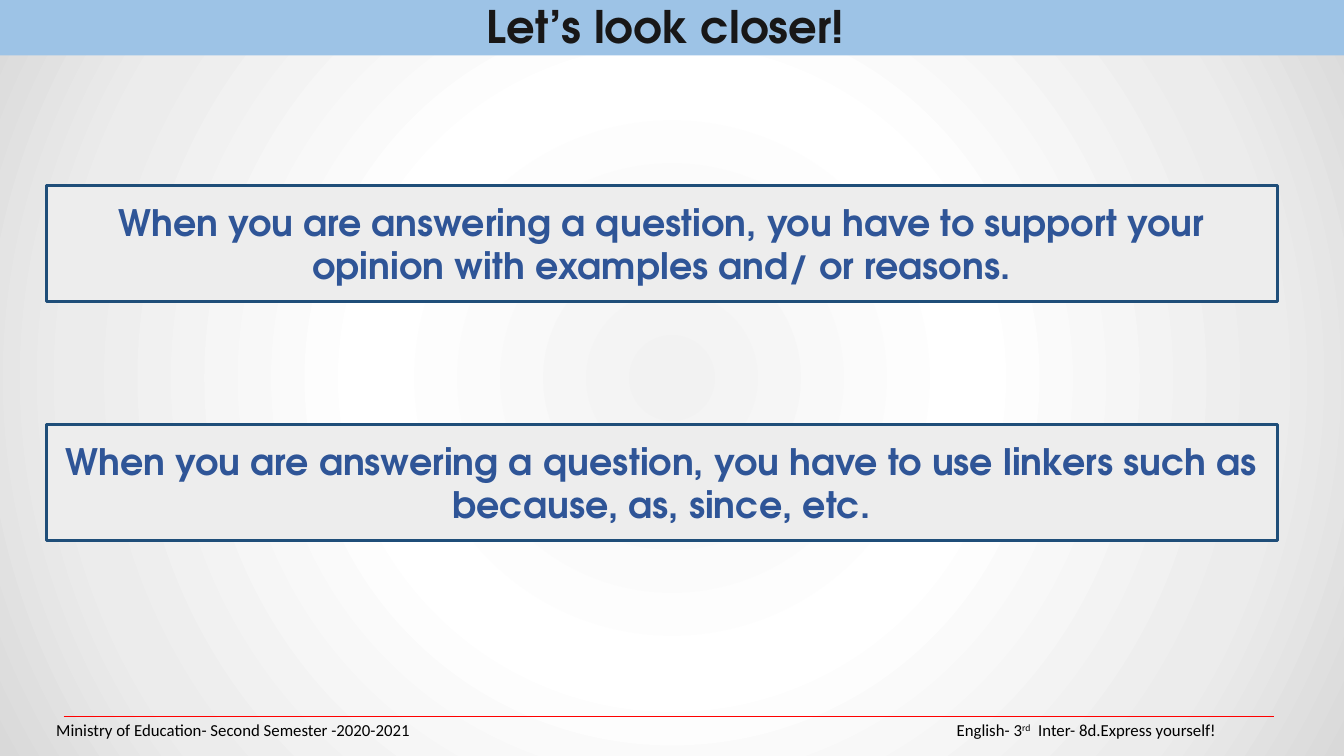
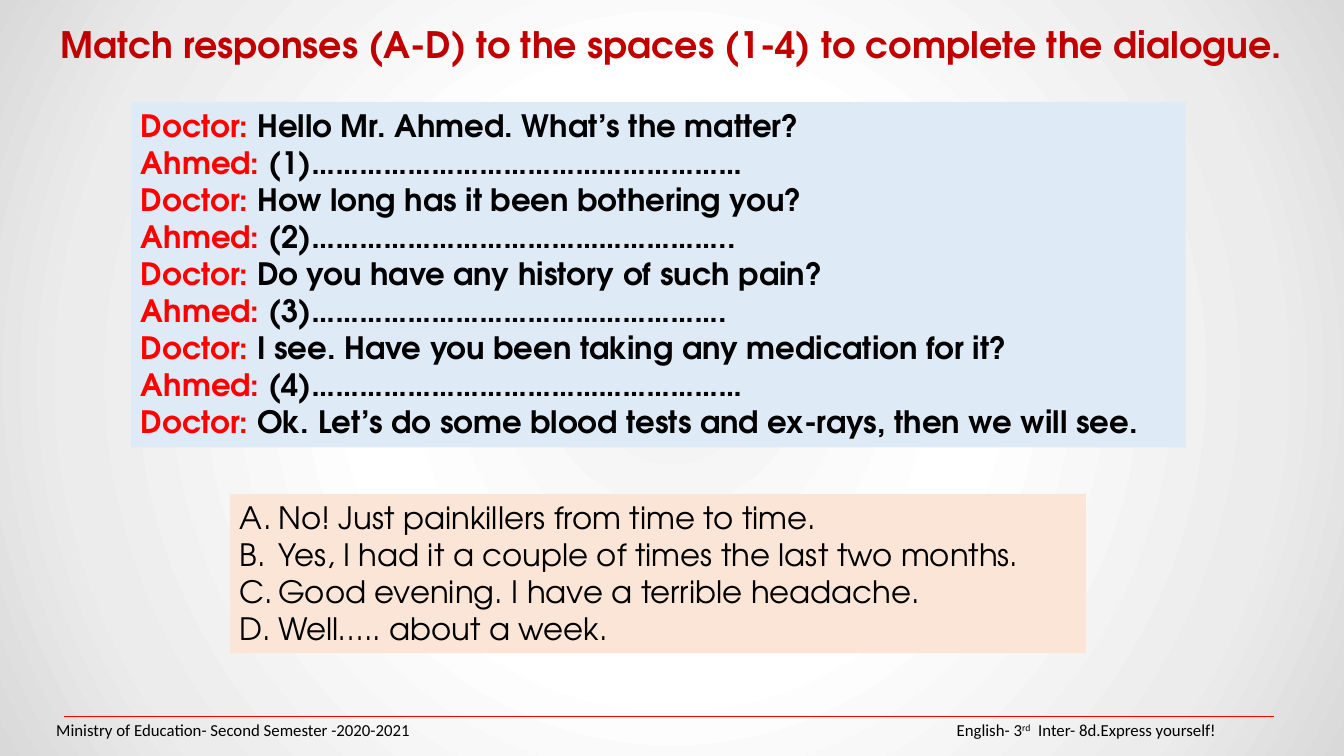
from lxml import etree
from pptx import Presentation
from pptx.dml.color import RGBColor
from pptx.enum.shapes import MSO_CONNECTOR, MSO_SHAPE
from pptx.enum.text import MSO_ANCHOR, PP_ALIGN
from pptx.oxml.ns import qn
from pptx.util import Inches, Pt

RECT = MSO_SHAPE.RECTANGLE
STRAIGHT = MSO_CONNECTOR.STRAIGHT
LEFT, CENTER = PP_ALIGN.LEFT, PP_ALIGN.CENTER
TOP, MIDDLE = MSO_ANCHOR.TOP, MSO_ANCHOR.MIDDLE

WIDTH, HEIGHT = 13.33, 7.5
HEAD_FONT, FOOT_FONT = "TeX Gyre Adventor", "Calibri"
COLORS = {
    "band": "9DC3E6", "title": "181717", "task": "C00000",
    "card": "EDEDED", "card_line": "1F4E79", "card_text": "2F5597",
    "dialogue": "DEEBF7", "answers": "FBE5D6",
    "speaker": "FF0000", "text": "000000", "rule": "FF0000",
}
BACKDROP = [(0, "F2F2F2"), (39, "FFFFFF"), (78, "ECECEC"), (100, "D9D9D9")]


def rgb(name):
    return RGBColor.from_string(COLORS[name])


class Deck:
    def __init__(self):
        self.prs = Presentation()
        self.prs.slide_width = Inches(WIDTH)
        self.prs.slide_height = Inches(HEIGHT)
        self.s = None
        self.backdrop()

    def backdrop(self):
        master = self.prs.slide_master
        master.background.fill.gradient()
        grad = next(master.element.iter(qn("a:gradFill")))
        for child in list(grad):
            grad.remove(child)
        stops = etree.SubElement(grad, qn("a:gsLst"))
        for pos, color in BACKDROP:
            stop = etree.SubElement(stops, qn("a:gs"), pos=str(pos * 1000))
            etree.SubElement(stop, qn("a:srgbClr"), val=color)
        circle = etree.SubElement(grad, qn("a:path"), {"path": "circle"})
        etree.SubElement(circle, qn("a:fillToRect"),
                         l="50000", t="50000", r="50000", b="50000")

    def slide(self):
        self.s = self.prs.slides.add_slide(self.prs.slide_layouts[6])
        self.footer()

    def box(self, x, y, w, h, fill=None, line=None, anchor=TOP):
        at = [Inches(v) for v in (x, y, w, h)]
        if fill:
            sp = self.s.shapes.add_shape(RECT, *at)
            sp.shadow.inherit = False
            sp.fill.solid()
            sp.fill.fore_color.rgb = rgb(fill)
            if line:
                sp.line.color.rgb = rgb(line)
                sp.line.width = Pt(2.25)
            else:
                sp.line.fill.background()
        else:
            sp = self.s.shapes.add_textbox(*at)
        tf = sp.text_frame
        tf.word_wrap = True
        tf.vertical_anchor = anchor
        return tf

    def add_text(self, p, parts, size, bold=True, font=HEAD_FONT, align=LEFT):
        p.alignment = align
        for text, color in parts:
            r = p.add_run()
            r.text = text
            r.font.name = font
            r.font.size = Pt(size)
            r.font.bold = bold
            r.font.color.rgb = rgb(color)

    def paragraphs(self, tf, count):
        return [tf.paragraphs[0]] + [tf.add_paragraph() for _ in range(count - 1)]

    def title(self, text, y, h, size, color, fill=None):
        p = self.box(0, y, WIDTH, h, fill).paragraphs[0]
        p.line_spacing = 0.9
        p.space_before = Pt(10)
        self.add_text(p, [(text, color)], size, align=CENTER)

    def card(self, text, y):
        tf = self.box(0.46, y, 12.21, 1.15, "card", "card_line", MIDDLE)
        self.add_text(tf.paragraphs[0], [(text, "card_text")], 26, align=CENTER)

    def dialogue(self, turns):
        tf = self.box(1.3, 1.01, 10.46, 3.43, "dialogue")
        for p, (speaker, words) in zip(self.paragraphs(tf, len(turns)), turns):
            self.add_text(p, [(speaker + ": ", "speaker"), (words, "text")], 22)

    def answers(self, options):
        tf = self.box(2.28, 4.9, 8.49, 1.58, "answers")
        for p, option in zip(self.paragraphs(tf, len(options)), options):
            self.add_text(p, [(option, "text")], 22, bold=False)
            pPr = p._p.get_or_add_pPr()
            pPr.set("marL", str(Inches(0.38)))
            pPr.set("indent", str(-Inches(0.38)))
            etree.SubElement(pPr, qn("a:buFont"), typeface="+mj-lt")
            etree.SubElement(pPr, qn("a:buAutoNum"), type="alphaUcPeriod")

    def footer(self):
        y = Inches(7.11)
        rule = self.s.shapes.add_connector(STRAIGHT, Inches(0.63), y, Inches(12.64), y)
        rule.line.color.rgb = rgb("rule")
        rule.line.width = Pt(0.75)
        etree.SubElement(rule._element.spPr, qn("a:effectLst"))
        for x, parts in (
            (0.46, ["Ministry of Education- Second Semester -2020-2021"]),
            (9.39, ["English- 3", "rd", "  Inter- 8d.Express yourself!"]),
        ):
            tf = self.box(x, 7.14, 3.8, 0.2, anchor=MIDDLE)
            tf.margin_top = tf.margin_bottom = 0
            p = tf.paragraphs[0]
            self.add_text(p, [(t, "text") for t in parts], 12, False, FOOT_FONT)
            for r in p.runs[1:2]:
                r._r.get_or_add_rPr().set("baseline", "30000")


def main():
    deck = Deck()

    deck.slide()
    deck.title("Let’s look closer! ", 0, 0.55, 32, "title", "band")
    deck.card("When you are answering a question, you have to support your "
              "opinion with examples and/ or reasons.", 1.84)
    deck.card("When you are answering a question, you have to use linkers "
              "such as because, as, since, etc.", 4.21)

    deck.slide()
    deck.title("Match responses (A-D) to the spaces (1-4) to complete the dialogue.",
               0.22, 0.58, 26, "task")
    deck.dialogue([
        ("Doctor", "Hello Mr. Ahmed. What’s the matter?"),
        ("Ahmed", "(1)" + "…" * 18),
        ("Doctor", "How long has it been bothering you?"),
        ("Ahmed", "(2)" + "…" * 17 + ".."),
        ("Doctor", "Do you have any history of such pain?"),
        ("Ahmed", "(3)" + "…" * 17 + "."),
        ("Doctor", "I see. Have you been taking any medication for it?"),
        ("Ahmed", "(4)" + "…" * 18),
        ("Doctor", "Ok. Let’s do some blood tests and ex-rays, then we will see."),
    ])
    deck.answers([
        "No! Just painkillers from time to time.",
        "Yes, I had it a couple of times the last two months.",
        "Good evening. I have a terrible headache.",
        "Well….. about a week.",
    ])

    deck.prs.save("out.pptx")


if __name__ == "__main__":
    main()
